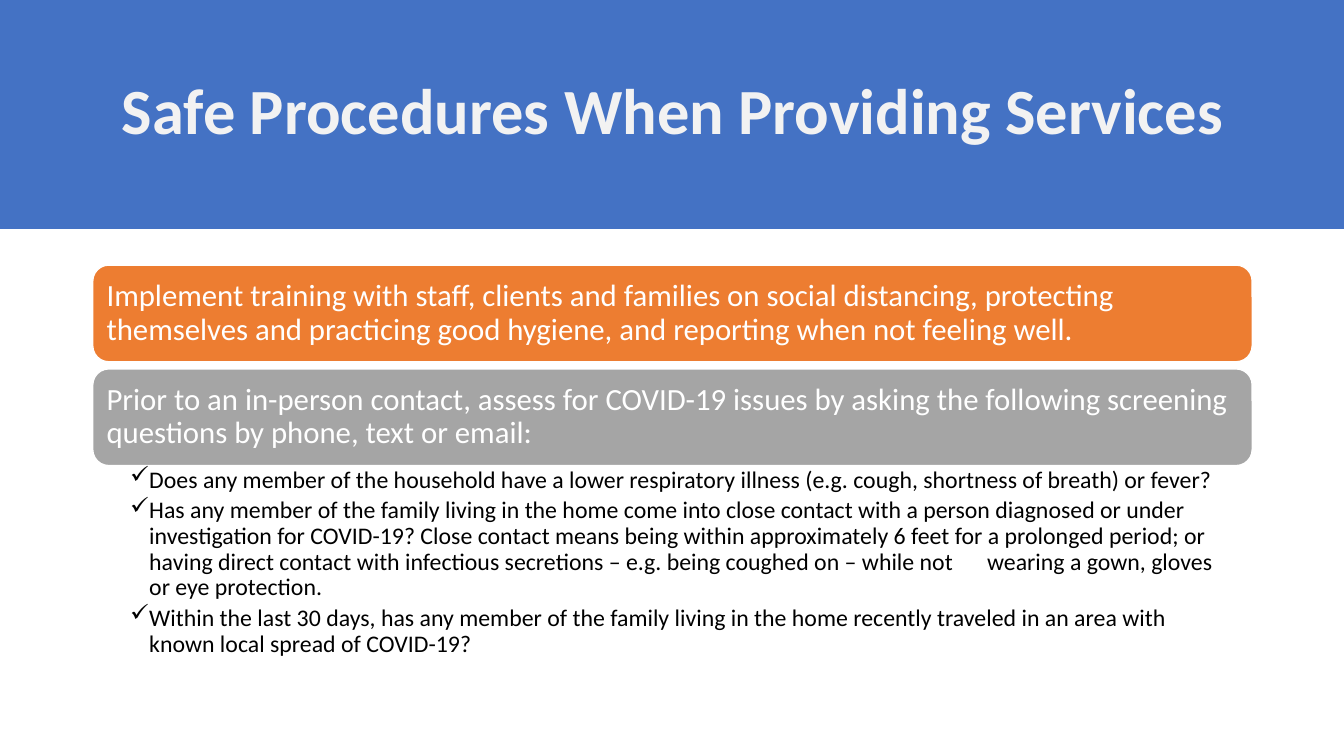
from lxml import etree
from pptx import Presentation
from pptx.dml.color import RGBColor
from pptx.enum.shapes import MSO_SHAPE
from pptx.enum.text import MSO_ANCHOR, PP_ALIGN
from pptx.oxml.ns import qn
from pptx.util import Inches, Pt

RECTANGLE, ROUNDED = MSO_SHAPE.RECTANGLE, MSO_SHAPE.ROUNDED_RECTANGLE
TOP, MIDDLE = MSO_ANCHOR.TOP, MSO_ANCHOR.MIDDLE
LEFT, CENTER = PP_ALIGN.LEFT, PP_ALIGN.CENTER

FONT = "Calibri"
MARGIN, CONTENT_WIDTH = 0.92, 11.5
PANEL_TOP, PANEL_HEIGHT, PANEL_STEP = 2.63, 0.96, 1.03

TITLE = "Safe Procedures When Providing Services"
PANELS = [
    ("ED7D31", "Implement training with staff, clients and families on social "
     "distancing, protecting themselves and practicing good hygiene, and "
     "reporting when not feeling well."),
    ("A5A5A5", "Prior to an in-person contact, assess for COVID-19 issues by "
     "asking the following screening questions by phone, text or email:"),
]
QUESTIONS = [
    "Does any member of the household have a lower respiratory illness (e.g. "
    "cough, shortness of breath) or fever?",
    "Has any member of the family living in the home come into close contact "
    "with a person diagnosed or under investigation for COVID-19? Close contact "
    "means being within approximately 6 feet for a prolonged period; or having "
    "direct contact with infectious secretions – e.g. being coughed on – while "
    "not \twearing a gown, gloves or eye protection.",
    "Within the last 30 days, has any member of the family living in the home "
    "recently traveled in an area with known local spread of COVID-19?",
]


def color(value):
    return RGBColor.from_string(value)


def add_box(page, kind, left, top, width, height, fill, line=None):
    box = page.shapes.add_shape(
        kind, Inches(left), Inches(top), Inches(width), Inches(height))
    box.shadow.inherit = False
    box.fill.solid()
    box.fill.fore_color.rgb = color(fill)
    if line:
        box.line.color.rgb = color(line)
        box.line.width = Pt(1)
    else:
        box.line.fill.background()
    return box


def add_text_box(page, left, top, width, height):
    return page.shapes.add_textbox(
        Inches(left), Inches(top), Inches(width), Inches(height))


def write(box, texts, size, ink, insets, anchor=MIDDLE, align=LEFT,
          bold=False, after=0):
    """Fill a box with one paragraph per text; insets are left, top, right, bottom."""
    frame = box.text_frame
    frame.word_wrap = True
    frame.vertical_anchor = anchor
    (frame.margin_left, frame.margin_top,
     frame.margin_right, frame.margin_bottom) = map(Inches, insets)
    frame.text = "\n".join(texts)
    for para in frame.paragraphs:
        para.alignment = align
        para.line_spacing = 0.9
        para.space_after = Pt(after)
        para.font.name = FONT
        para.font.size = Pt(size)
        para.font.bold = bold
        para.font.color.rgb = color(ink)


def add_check_mark(para, indent):
    para.level = 1
    props = para._p.get_or_add_pPr()
    props.set("marL", str(Inches(indent)))
    props.set("indent", str(-Inches(indent)))
    mark = etree.Element(qn("a:buChar"), char="✓")
    props.find(qn("a:spcAft")).addnext(mark)


def main():
    deck = Presentation()
    deck.slide_width, deck.slide_height = Inches(13.33), Inches(7.5)
    page = deck.slides.add_slide(deck.slide_layouts[6])

    # Title band
    add_box(page, RECTANGLE, 0, -0.01, 13.33, 2.28, "4472C4")
    title = add_text_box(page, MARGIN, 0.4, CONTENT_WIDTH, 1.45)
    write(title, [TITLE], 46, "F2F2F2", (0.1, 0.05, 0.1, 0.05),
          align=CENTER, bold=True)

    # Guidance panels
    for index, (fill, text) in enumerate(PANELS):
        panel = add_box(page, ROUNDED, MARGIN, PANEL_TOP + index * PANEL_STEP,
                        CONTENT_WIDTH, PANEL_HEIGHT, fill, "FFFFFF")
        write(panel, [text], 22, "FFFFFF", (0.09, 0.09, 0.09, 0.09))

    # Screening questions
    questions = add_text_box(page, MARGIN, 4.61, CONTENT_WIDTH, 1.99)
    write(questions, QUESTIONS, 17, "000000", (0.37, 0.03, 0.17, 0.03),
          anchor=TOP, after=3.4)
    for para in questions.text_frame.paragraphs:
        add_check_mark(para, 0.19)

    deck.save("out.pptx")


if __name__ == "__main__":
    main()
